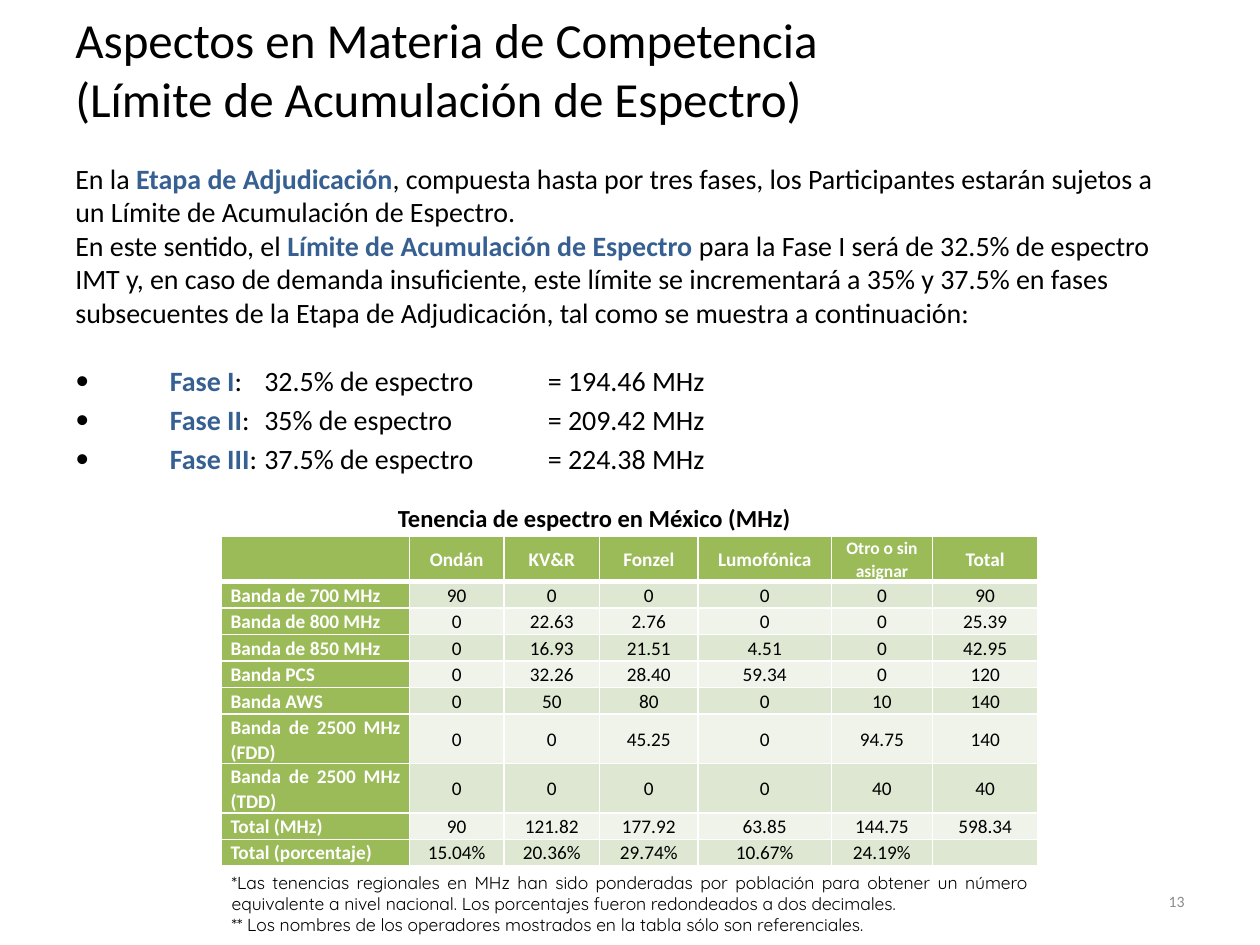
import dataclasses

import lxml.etree
import pptx
import pptx.dml.color
import pptx.enum.text
import pptx.oxml.ns
import pptx.util

Inches = pptx.util.Inches
Pt = pptx.util.Pt
ALIGN = pptx.enum.text.PP_ALIGN
ANCHOR = pptx.enum.text.MSO_ANCHOR


@dataclasses.dataclass(frozen=True)
class Theme:
    """Colours, fonts and type sizes of the slide."""
    black: str = "000000"
    white: str = "FFFFFF"
    blue: str = "376092"
    grey: str = "8C8C8C"
    green: str = "9BBB59"
    bands: tuple = ("DEE7D1", "EFF3EA")
    font: str = "Calibri"
    note_font: str = "Quicksand"
    title: float = 28
    body: float = 16
    caption: float = 14
    cell: float = 11
    small: float = 10
    number: float = 9


THEME = Theme()
TAB_STEP = 0.75

INTRO = [
    [("En la ", False), ("Etapa de Adjudicación", True),
     (", compuesta hasta por tres fases, los Participantes estarán sujetos a un "
      "Límite de Acumulación de Espectro.", False)],
    [("En este sentido, el ", False), ("Límite de Acumulación de Espectro", True),
     (" para la Fase I será de 32.5% de espectro IMT y, en caso de demanda insuficiente, "
      "este límite se incrementará a 35% y 37.5% en fases subsecuentes de la Etapa de "
      "Adjudicación, tal como se muestra a continuación:", False)],
]
PHASES = [
    ("Fase I", ":\t32.5% de espectro\t= 194.46 MHz"),
    ("Fase II", ":\t35% de espectro\t\t= 209.42 MHz"),
    ("Fase III", ":\t37.5% de espectro\t= 224.38 MHz"),
]
HOLDINGS = [
    ("", "Ondán", "KV&R", "Fonzel", "Lumofónica", "Otro o sin asignar", "Total"),
    ("Banda de 700 MHz", "90", "0", "0", "0", "0", "90"),
    ("Banda de 800 MHz", "0", "22.63", "2.76", "0", "0", "25.39"),
    ("Banda de 850 MHz", "0", "16.93", "21.51", "4.51", "0", "42.95"),
    ("Banda PCS", "0", "32.26", "28.40", "59.34", "0", "120"),
    ("Banda AWS", "0", "50", "80", "0", "10", "140"),
    ("Banda de 2500 MHz (FDD)", "0", "0", "45.25", "0", "94.75", "140"),
    ("Banda de 2500 MHz (TDD)", "0", "0", "0", "0", "40", "40"),
    ("Total (MHz)", "90", "121.82", "177.92", "63.85", "144.75", "598.34"),
    ("Total (porcentaje)", "15.04%", "20.36%", "29.74%", "10.67%", "24.19%", ""),
]
COLUMN_WIDTHS = (1.49, 0.75, 0.76, 0.78, 1.06, 0.8, 0.84)
ROW_HEIGHTS = (0.35,) + (0.21,) * 5 + (0.39,) * 2 + (0.21,) * 2
NOTES = (
    "*Las tenencias regionales en MHz han sido ponderadas por población para obtener un "
    "número equivalente a nivel nacional. Los porcentajes fueron redondeados a dos decimales.",
    "** Los nombres de los operadores mostrados en la tabla sólo son referenciales.",
)


def apply(target, formats):
    """Set each attribute of target named in formats."""
    for name, value in formats.items():
        setattr(target, name, value)


def rgb(colour):
    """Return the colour object of a hex string."""
    return pptx.dml.color.RGBColor.from_string(colour)


def add_element(parent, tag, **attributes):
    """Append a drawing element to parent and return it."""
    return lxml.etree.SubElement(parent, pptx.oxml.ns.qn(tag), attributes)


def add_run(paragraph, text, size, colour=THEME.black, bold=False, font=THEME.font):
    """Add a formatted run to a paragraph."""
    run = paragraph.add_run()
    run.text = text
    apply(run.font, {"size": Pt(size), "bold": bold, "name": font})
    run.font.color.rgb = rgb(colour)


def add_paragraph(frame, first):
    """Return the opening paragraph of a frame or a new one."""
    return frame.paragraphs[0] if first else frame.add_paragraph()


def add_frame(slide, box, anchor=ANCHOR.TOP):
    """Add a wrapping text box and return its frame."""
    frame = slide.shapes.add_textbox(*map(Inches, box)).text_frame
    apply(frame, {"word_wrap": True, "vertical_anchor": anchor})
    return frame


def add_line(slide, box, text, anchor=ANCHOR.TOP, align=ALIGN.LEFT, **style):
    """Add a text box with one paragraph in one style."""
    paragraph = add_frame(slide, box, anchor).paragraphs[0]
    paragraph.alignment = align
    for position, part in enumerate(text.split("\n")):
        if position:
            paragraph.add_line_break()
        add_run(paragraph, part, **style)


def add_phase_bullet(paragraph):
    """Give a paragraph a hanging bullet and evenly spaced tab stops."""
    step = Inches(TAB_STEP)
    properties = paragraph._p.get_or_add_pPr()
    for name, value in {"marL": step, "indent": -step}.items():
        properties.set(name, str(value))
    add_element(add_element(properties, "a:buClr"), "a:srgbClr", val=THEME.black)
    add_element(properties, "a:buFont", typeface=THEME.font)
    add_element(properties, "a:buChar", char="•")
    stops = add_element(properties, "a:tabLst")
    for count in range(1, 9):
        add_element(stops, "a:tab", pos=str(step * count), algn="l")


def add_body(slide, box):
    """Add the explanation and the list of phases."""
    frame = add_frame(slide, box)
    for index, parts in enumerate(INTRO):
        paragraph = add_paragraph(frame, index == 0)
        for text, strong in parts:
            add_run(paragraph, text, THEME.body, THEME.blue if strong else THEME.black, strong)
    for index, (phase, limit) in enumerate(PHASES):
        paragraph = frame.add_paragraph()
        add_phase_bullet(paragraph)
        paragraph.space_before = Pt(3.2 if index else 19.5)
        add_run(paragraph, phase, THEME.body, THEME.blue, True)
        add_run(paragraph, limit, THEME.body)


def add_borders(cell, widths):
    """Draw white cell borders with a width in points for each side."""
    properties = cell._tc.get_or_add_tcPr()
    for position, (side, width) in enumerate(widths.items()):
        line = add_element(properties, f"a:{side}", w=str(Pt(width)))
        fill = add_element(line, "a:solidFill")
        add_element(fill, "a:srgbClr", val=THEME.white)
        properties.insert(position, line)


def fill_cell(cell, text, heading, align):
    """Write a table cell, keeping an empty one as low as its row."""
    paragraph = cell.text_frame.paragraphs[0]
    apply(paragraph, {"alignment": align, "line_spacing": 1.07})
    if text:
        size = THEME.small if text == "Otro o sin asignar" else THEME.cell
        add_run(paragraph, text, size, THEME.white if heading else THEME.black, heading)
    else:
        add_element(paragraph._p, "a:endParaRPr", sz=str(THEME.cell * 100))


def add_holdings_table(slide, box):
    """Add the table of spectrum held by each operator."""
    table = slide.shapes.add_table(len(HOLDINGS), len(COLUMN_WIDTHS), *map(Inches, box)).table
    for column, width in zip(table.columns, COLUMN_WIDTHS):
        column.width = Inches(width)
    for row, height in zip(table.rows, ROW_HEIGHTS):
        row.height = Inches(height)
    for r, values in enumerate(HOLDINGS):
        for c, text in enumerate(values):
            cell = table.cell(r, c)
            heading = r == 0 or c == 0
            apply(cell, {"margin_left": Inches(0.07), "margin_right": Inches(0.07),
                         "margin_top": 0, "margin_bottom": 0,
                         "vertical_anchor": ANCHOR.MIDDLE})
            cell.fill.solid()
            cell.fill.fore_color.rgb = rgb(THEME.green if heading else THEME.bands[(r - 1) % 2])
            add_borders(cell, {"lnL": 1, "lnR": 1, "lnT": 3 if r == 1 else 1,
                               "lnB": 1 if r else 3})
            fill_cell(cell, text, heading, ALIGN.CENTER if c else ALIGN.JUSTIFY)


def add_notes(slide, box):
    """Add the notes below the table."""
    frame = add_frame(slide, box)
    for index, note in enumerate(NOTES):
        paragraph = add_paragraph(frame, index == 0)
        paragraph.alignment = ALIGN.JUSTIFY
        add_run(paragraph, note, THEME.small, font=THEME.note_font)


def main():
    """Build the slide and save it."""
    deck = pptx.Presentation()
    apply(deck, {"slide_width": Inches(10), "slide_height": Inches(7.5)})
    slide = deck.slides.add_slide(deck.slide_layouts[6])
    add_line(slide, (0.5, 0, 9, 1.08),
             "Aspectos en Materia de Competencia\n(Límite de Acumulación de Espectro)",
             ANCHOR.MIDDLE, size=THEME.title)
    add_line(slide, (7.17, 6.95, 2.33, 0.4), "13", ANCHOR.MIDDLE, ALIGN.RIGHT,
             size=THEME.number, colour=THEME.grey)
    add_body(slide, (0.5, 1.23, 9, 2.78))
    add_holdings_table(slide, (1.76, 4.26, 6.49, 2.59))
    add_line(slide, (3.06, 3.94, 4.31, 0.34), "Tenencia de espectro en México (MHz)",
             size=THEME.caption, bold=True)
    add_notes(slide, (1.74, 6.87, 6.51, 0.61))
    deck.save("out.pptx")


if __name__ == "__main__":
    main()
